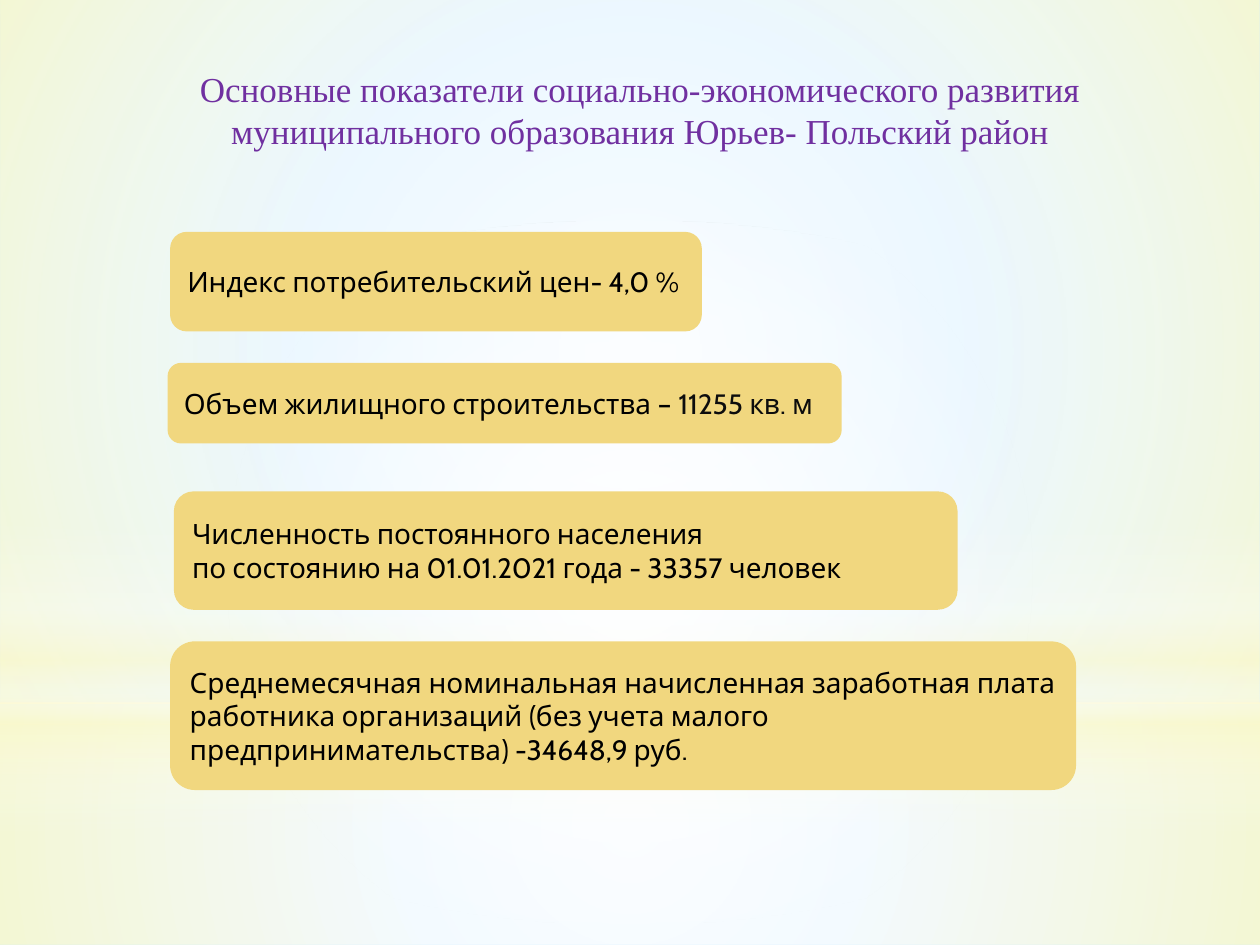
from pptx import Presentation
from pptx.dml.color import RGBColor
from pptx.enum.shapes import MSO_SHAPE
from pptx.enum.text import MSO_ANCHOR, MSO_AUTO_SIZE, PP_ALIGN
from pptx.oxml import parse_xml
from pptx.oxml.ns import nsdecls, qn
from pptx.util import Inches, Pt

RECT, OVAL, ROUND = MSO_SHAPE.RECTANGLE, MSO_SHAPE.OVAL, MSO_SHAPE.ROUNDED_RECTANGLE
MIDDLE, NO_FIT = MSO_ANCHOR.MIDDLE, MSO_AUTO_SIZE.NONE
LEFT, CENTER, JUSTIFY = PP_ALIGN.LEFT, PP_ALIGN.CENTER, PP_ALIGN.JUSTIFY

SKY = RGBColor(0xCC, 0xEC, 0xFF)
WHITE = RGBColor(0xFF, 0xFF, 0xFF)
CREAM = RGBColor(0xFE, 0xFA, 0xC9)
GOLD = RGBColor(0xF1, 0xD7, 0x7F)
PURPLE = RGBColor(0x70, 0x30, 0xA0)
BLACK = RGBColor(0, 0, 0)
INK = RGBColor(0x0D, 0x0D, 0x0D)

RADIAL = ('<a:path path="circle"><a:fillToRect l="50000" t="50000" '
          'r="50000" b="50000"/></a:path>')
LINEAR = '<a:lin ang="5400000" scaled="0"/>'
FRAME = {"word_wrap": True, "auto_size": NO_FIT, "vertical_anchor": MIDDLE,
         "margin_left": Inches(0.1), "margin_right": Inches(0.1),
         "margin_top": Inches(0.05), "margin_bottom": Inches(0.05)}
HEAD = {"name": "Times New Roman", "size": Pt(20)}
BODY = {"name": "Cabin", "size": Pt(16)}

TITLE = ("Основные показатели социально-экономического развития "
         "муниципального образования Юрьев- Польский район")
VEILS = [
    (RECT, (0, 5.58, 10, 1.92), RADIAL,
     [(0, WHITE, 91), (37, WHITE, 76), (100, CREAM, 79)]),
    (RECT, (0, 0, 10, 5.58), RADIAL,
     [(0, WHITE, 89), (48, WHITE, 62), (100, CREAM, 79)]),
    (RECT, (0, 4.12, 10, 2.5), LINEAR,
     [(0, WHITE, 0), (29, WHITE, 30), (45, CREAM, 40),
      (55, WHITE, 26), (65, CREAM, 60), (100, WHITE, 0)]),
    (OVAL, (0, 1.75, 10, 5.58), RADIAL, [(0, WHITE, 100), (56, WHITE, 0)]),
]
CARDS = [
    ((1.35, 1.84, 4.22, 0.79), LEFT,
     [[("Индекс потребительский цен- 4,0 %", BLACK)]]),
    ((1.35, 5.09, 7.19, 1.18), JUSTIFY,
     [[("Среднемесячная номинальная начисленная заработная плата ", BLACK)],
      [("работника организаций (без учета малого ", BLACK)],
      [("предпринимательства) -34648,9 руб.", BLACK)]]),
    ((1.33, 2.88, 5.35, 0.64), LEFT,
     [[("Объем жилищного строительства – ", BLACK), ("11255 кв. м", INK)]]),
    ((1.38, 3.9, 6.22, 0.94), LEFT,
     [[("Численность постоянного населения", BLACK)],
      [("по состоянию на 01.01.2021 года - 33357 человек", BLACK)]]),
]


def style(item, values):
    """Set each named value on the item."""
    for key, value in values.items():
        setattr(item, key, value)


def add_run(para, text, font, color):
    """Add a formatted run to a paragraph."""
    run = para.add_run()
    run.text = text
    style(run.font, font)
    run.font.color.rgb = color


def add_shape(slide, kind, box):
    """Add a shape with no line or shadow in the box."""
    shape = slide.shapes.add_shape(kind, *map(Inches, box))
    shape.shadow.inherit = False
    shape.line.fill.background()
    return shape


def add_veil(slide, kind, box, course, stops):
    """Lay a translucent gradient over the box."""
    shape = add_shape(slide, kind, box)
    shape.fill.gradient()
    marks = "".join(
        f'<a:gs pos="{pos * 1000}"><a:srgbClr val="{color}">'
        f'<a:alpha val="{alpha * 1000}"/></a:srgbClr></a:gs>'
        for pos, color, alpha in stops)
    old = shape.element.spPr.find(qn("a:gradFill"))
    old.getparent().replace(old, parse_xml(
        f'<a:gradFill {nsdecls("a")} rotWithShape="1">'
        f'<a:gsLst>{marks}</a:gsLst>{course}</a:gradFill>'))


def add_title(slide, box):
    """Place the title in the box, above the backdrop."""
    title = slide.shapes.title
    title.element.getparent().append(title.element)
    style(title, dict(zip(("left", "top", "width", "height"), map(Inches, box))))
    style(title.text_frame, FRAME)
    para = title.text_frame.paragraphs[0]
    para.alignment = CENTER
    add_run(para, TITLE, HEAD, PURPLE)


def add_card(slide, box, align, lines):
    """Add a gold card with its lines of text to the box."""
    card = add_shape(slide, ROUND, box)
    card.fill.solid()
    card.fill.fore_color.rgb = GOLD
    frame = card.text_frame
    style(frame, FRAME)
    for i, line in enumerate(lines):
        para = frame.add_paragraph() if i else frame.paragraphs[0]
        para.alignment = align
        for text, color in line:
            add_run(para, text, BODY, color)


def main():
    """Build and save the slide."""
    deck = Presentation()
    deck.slide_width, deck.slide_height = Inches(10), Inches(7.5)
    slide = deck.slides.add_slide(deck.slide_layouts[5])
    slide.background.fill.solid()
    slide.background.fill.fore_color.rgb = SKY
    for veil in VEILS:
        add_veil(slide, *veil)
    add_title(slide, (0.58, 0.43, 9, 0.88))
    for card in CARDS:
        add_card(slide, *card)
    deck.save("out.pptx")


if __name__ == "__main__":
    main()
